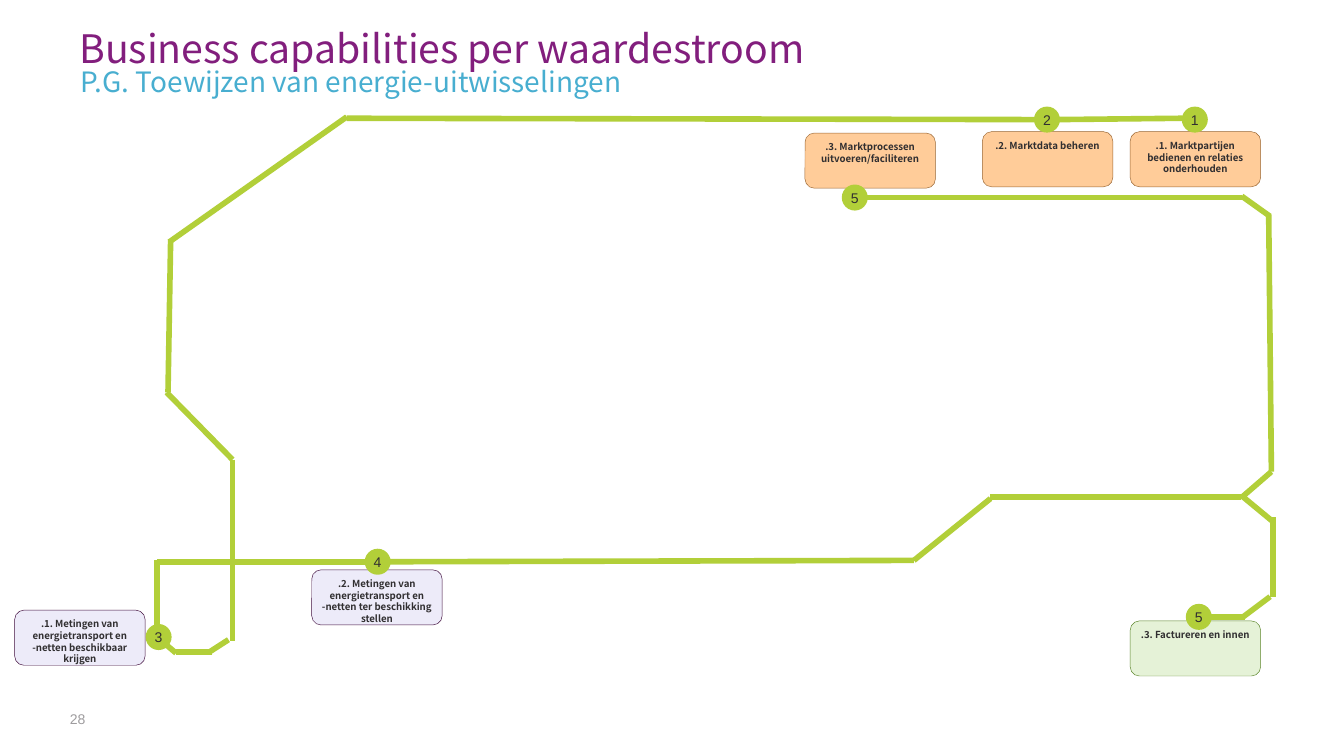
from lxml import etree
from pptx import Presentation
from pptx import util as u
from pptx.dml.color import RGBColor
from pptx.enum import shapes, text
from pptx.oxml import ns

PX = 9144
SANS = "Noto Sans CJK TC"
GREEN = "B2CF39"
DARK = "312F31"


def color(value):
    return RGBColor.from_string(value)


def write(box, words, size, font, ink, bold=False, align=None, inset=0, anchor=text.MSO_ANCHOR.TOP):
    frame = box.text_frame
    frame.word_wrap = True
    frame.auto_size = text.MSO_AUTO_SIZE.NONE
    frame.vertical_anchor = anchor
    frame.margin_left = frame.margin_right = 0
    frame.margin_top = frame.margin_bottom = inset * PX
    para = frame.paragraphs[0]
    para.alignment = align
    span = para.add_run()
    span.text = words
    span.font.size = u.Pt(size)
    span.font.name = font
    span.font.bold = bold
    span.font.color.rgb = color(ink)
    return para


deck = Presentation()
deck.slide_width = 1000 * PX
deck.slide_height = deck.slide_width * 9 // 16
page = deck.slides.add_slide(deck.slide_layouts[5])

title = page.shapes.title
title.left, title.top, title.width, title.height = [n * PX for n in (59, 14, 728, 39)]
para = write(title, "Business capabilities per waardestroom", 21, SANS, "821E7D",
             align=text.PP_ALIGN.LEFT)
para.line_spacing = u.Pt(28)

subtitle = page.shapes.add_textbox(*[n * PX for n in (60, 43, 755, 22)])
para = write(subtitle, "P.G. Toewijzen van energie-uitwisselingen", 15, SANS, "48AED0")
para.line_spacing = 1.2

number = page.shapes.add_textbox(*[n * PX for n in (52, 529, 225, 30)])
write(number, "28", 7.5, "Arial", "9E9C9E")

capabilities = [
    (841, 98, ".1. Marktpartijen bedienen en relaties onderhouden", "FFCC99", "996633"),
    (731, 98, ".2. Marktdata beheren", "FFCC99", "996633"),
    (599, 99, ".3. Marktprocessen uitvoeren/faciliteren", "FFCC99", "996633"),
    (232, 424, ".2. Metingen van energietransport en -netten ter beschikking stellen",
     "EDEBF9", "410F3E"),
    (11, 454, ".1. Metingen van energietransport en -netten beschikbaar krijgen",
     "EDEBF9", "410F3E"),
    (841, 462, ".3. Factureren en innen", "E5F2D7", "5E872D"),
]
for left, top, words, fill, edge in capabilities:
    card = page.shapes.add_shape(shapes.MSO_SHAPE.ROUNDED_RECTANGLE,
                                 left * PX, top * PX, 97 * PX, 41 * PX)
    card.shadow.inherit = False
    card.fill.solid()
    card.fill.fore_color.rgb = color(fill)
    card.line.color.rgb = color(edge)
    card.line.width = u.Pt(0.25)
    write(card, words, 5.2, SANS, DARK, True, text.PP_ALIGN.CENTER, 4)

tracks = [
    (880, 88, 787, 89), (770, 89, 258, 88), (258, 87, 126, 180),
    (127, 178, 125, 292), (124, 292, 173, 342), (173, 342, 173, 477),
    (170, 476, 156, 485), (158, 485, 131, 485), (131, 486, 124, 480),
    (117, 465, 117, 417), (117, 418, 272, 418), (289, 418, 680, 417),
    (680, 417, 737, 371), (737, 370, 923, 370), (924, 370, 946, 351),
    (946, 351, 944, 160), (945, 161, 924, 146), (924, 147, 645, 147),
    (924, 369, 947, 388), (947, 385, 947, 444), (945, 444, 925, 459),
    (926, 459, 901, 459),
]
for track in tracks:
    line = page.shapes.add_connector(shapes.MSO_CONNECTOR.STRAIGHT, *[n * PX for n in track])
    line.line.color.rgb = color(GREEN)
    line.line.width = u.Pt(3)
    etree.SubElement(line._element.spPr, ns.qn("a:effectLst"))

stations = [("1", 880, 80), ("2", 770, 80), ("3", 109, 465),
            ("4", 272, 409), ("5", 627, 138), ("5", 883, 450)]
for label, left, top in stations:
    station = page.shapes.add_shape(shapes.MSO_SHAPE.OVAL,
                                    left * PX, top * PX, 18 * PX, 18 * PX)
    station.shadow.inherit = False
    station.fill.solid()
    station.fill.fore_color.rgb = color(GREEN)
    station.line.color.rgb = color(GREEN)
    station.line.width = u.Pt(1)
    write(station, label, 7.5, "Arial", DARK, align=text.PP_ALIGN.CENTER,
          anchor=text.MSO_ANCHOR.MIDDLE)

deck.save("out.pptx")
